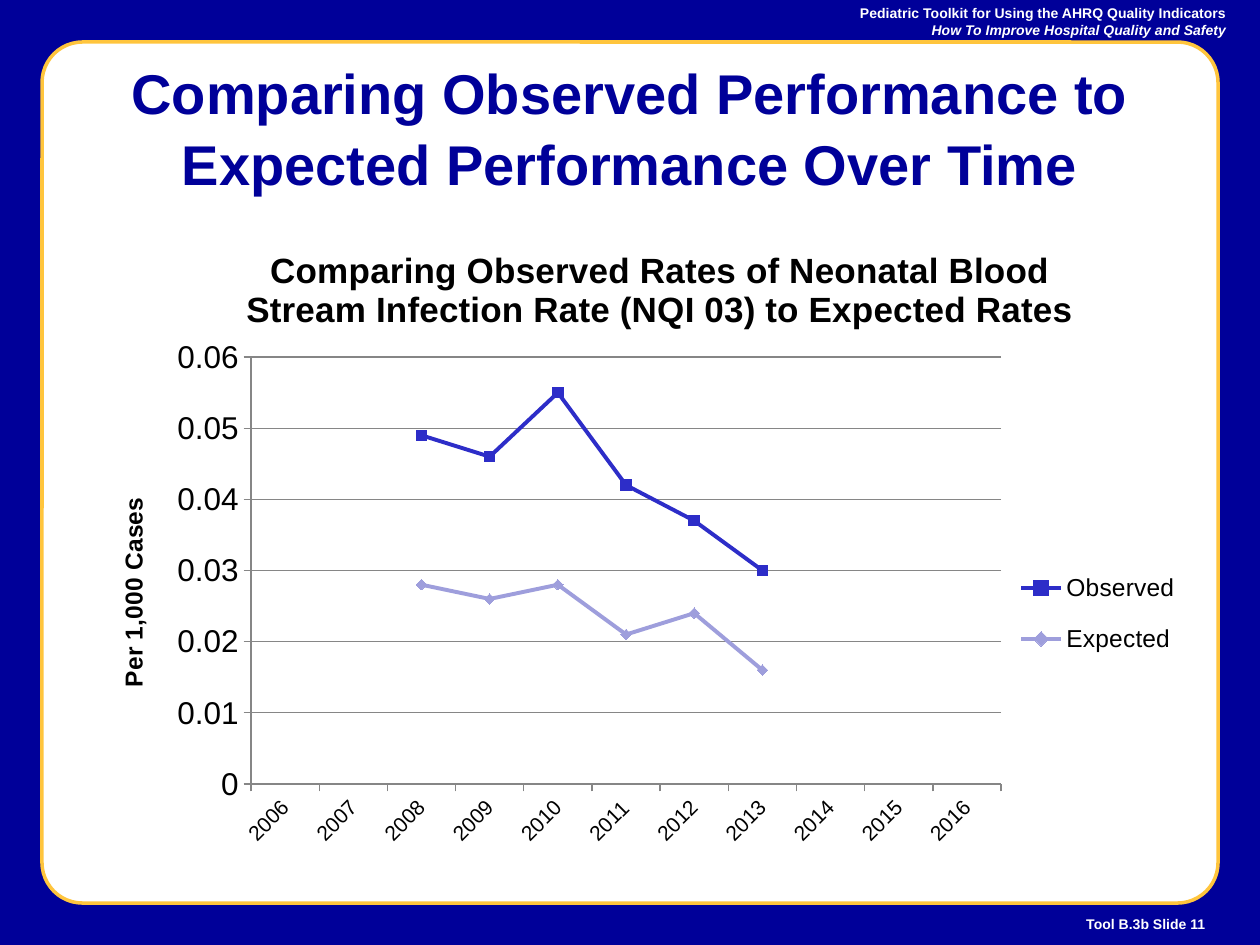
from pptx import Presentation
from pptx.chart.data import CategoryChartData
from pptx.dml.color import RGBColor
from pptx.enum.chart import XL_CHART_TYPE, XL_LEGEND_POSITION, XL_MARKER_STYLE, XL_TICK_MARK
from pptx.enum.shapes import MSO_SHAPE
from pptx.enum.text import MSO_ANCHOR, PP_ALIGN
from pptx.oxml import parse_xml
from pptx.oxml.ns import nsdecls, qn
from pptx.util import Pt

NAVY = RGBColor(0x00, 0x00, 0x99)
WHITE = RGBColor(0xFF, 0xFF, 0xFF)
GOLD = RGBColor(0xFF, 0xC5, 0x3D)
BLACK = RGBColor(0x00, 0x00, 0x00)
GRAY = RGBColor(0x86, 0x86, 0x86)
BLUE = RGBColor(0x2D, 0x2D, 0xC8)
LAVENDER = RGBColor(0x9E, 0x9E, 0xDC)

YEARS = [str(year) for year in range(2006, 2017)]
RATES = [
    ("Observed", [0.049, 0.046, 0.055, 0.042, 0.037, 0.03], BLUE, XL_MARKER_STYLE.SQUARE),
    ("Expected", [0.028, 0.026, 0.028, 0.021, 0.024, 0.016], LAVENDER, XL_MARKER_STYLE.DIAMOND),
]


def style_font(font, size, color=BLACK, bold=False, italic=False):
    font.name = "Arial"
    font.size = Pt(size)
    font.color.rgb = color
    font.bold = bold
    font.italic = italic


def write_text(frame, text, size=8, color=WHITE, bold=True, italic=False,
               align=PP_ALIGN.RIGHT, new_paragraph=False):
    paragraph = frame.add_paragraph() if new_paragraph else frame.paragraphs[0]
    paragraph.alignment = align
    run = paragraph.add_run()
    run.text = text
    style_font(run.font, size, color, bold, italic)
    return paragraph


def add_panel(slide, preset, left, top, width, height, fill, border=None):
    panel = slide.shapes.add_shape(preset, Pt(left), Pt(top), Pt(width), Pt(height))
    panel.shadow.inherit = False
    panel.fill.solid()
    panel.fill.fore_color.rgb = fill
    if border is None:
        panel.line.fill.background()
    else:
        panel.line.color.rgb = border
        panel.line.width = Pt(2)
    return panel


def add_caption(slide, left, top, width, height):
    frame = slide.shapes.add_textbox(Pt(left), Pt(top), Pt(width), Pt(height)).text_frame
    frame.word_wrap = True
    frame.vertical_anchor = MSO_ANCHOR.MIDDLE
    return frame


def place_title(slide, text):
    title = slide.shapes.title
    title.left, title.top, title.width, title.height = Pt(54), Pt(30), Pt(612), Pt(84)
    title.text_frame.word_wrap = True
    title.text_frame.vertical_anchor = MSO_ANCHOR.MIDDLE
    heading = write_text(title.text_frame, text, size=32, color=NAVY, align=PP_ALIGN.CENTER)
    heading.line_spacing = 1.05
    slide.shapes._spTree.append(title._element)


def set_layout(part, index, inner=False, **fractions):
    for previous in part.findall(qn("c:layout")):
        part.remove(previous)
    target = '<c:layoutTarget val="inner"/>' if inner else ""
    modes = "".join(f'<c:{axis}Mode val="edge"/>' for axis in "xy")
    values = "".join(f'<c:{key} val="{value}"/>' for key, value in fractions.items())
    part.insert(index, parse_xml(
        f'<c:layout {nsdecls("c")}><c:manualLayout>{target}{modes}{values}'
        "</c:manualLayout></c:layout>"))


def style_axis(axis, size):
    axis.major_tick_mark = XL_TICK_MARK.OUTSIDE
    axis.minor_tick_mark = XL_TICK_MARK.NONE
    axis.format.line.color.rgb = GRAY
    style_font(axis.tick_labels.font, size)


def style_series(series, color, marker_style):
    series.smooth = False
    series.format.line.color.rgb = color
    series.format.line.width = Pt(2.25)
    series.marker.style = marker_style
    series.marker.size = 6
    series.marker.format.fill.solid()
    series.marker.format.fill.fore_color.rgb = color
    series.marker.format.line.color.rgb = color


def add_rate_chart(slide):
    data = CategoryChartData()
    data.categories = YEARS
    for name, rates, _, _ in RATES:
        data.add_series(name, [None, None, *rates, None, None, None])
    chart = slide.shapes.add_chart(XL_CHART_TYPE.LINE_MARKERS, Pt(55.44), Pt(115.2),
                                   Pt(628.56), Pt(376.56), data).chart
    style_font(chart.font, 18)
    chart.plots[0].vary_by_categories = False
    for series, (_, _, color, marker_style) in zip(chart.plots[0].series, RATES):
        style_series(series, color, marker_style)

    chart.has_title = True
    write_text(chart.chart_title.text_frame,
               "Comparing Observed Rates of Neonatal Blood Stream Infection Rate "
               "(NQI 03) to Expected Rates", size=20, color=BLACK, align=PP_ALIGN.CENTER)
    set_layout(chart.chart_title._element, 1, x=0.13, y=0.06)

    years, rates = chart.category_axis, chart.value_axis
    style_axis(years, 12)
    years._element.find(qn("c:txPr")).find(qn("a:bodyPr")).set("rot", "-2700000")
    style_axis(rates, 18)
    rates.minimum_scale, rates.maximum_scale, rates.major_unit = 0, 0.06, 0.01
    rates.tick_labels.number_format = "General"
    rates.tick_labels.number_format_is_linked = False
    rates.has_major_gridlines = True
    rates.major_gridlines.format.line.color.rgb = GRAY
    rates.has_title = True
    write_text(rates.axis_title.text_frame, "Per 1,000 Cases", size=14, color=BLACK,
               align=PP_ALIGN.CENTER)

    chart.has_legend = True
    chart.legend.position = XL_LEGEND_POSITION.RIGHT
    chart.legend.include_in_layout = False
    style_font(chart.legend.font, 14)
    set_layout(chart.legend._element, 1, x=0.83, y=0.53, w=0.16, h=0.19)
    plot_area = chart._chartSpace.chart.plotArea
    set_layout(plot_area, 0, inner=True, x=0.14, y=0.236, w=0.682, h=0.648)


def main():
    deck = Presentation()
    deck.slide_width, deck.slide_height = Pt(720), Pt(540)
    slide = deck.slides.add_slide(deck.slide_layouts[5])
    add_panel(slide, MSO_SHAPE.RECTANGLE, 0, 0, 720, 540, NAVY)
    card = add_panel(slide, MSO_SHAPE.ROUNDED_RECTANGLE, 24, 24, 672, 492, WHITE, GOLD)
    card.adjustments[0] = 0.047
    header = add_caption(slide, 12, 0, 696, 24)
    write_text(header, "Pediatric Toolkit for Using the AHRQ Quality Indicators")
    write_text(header, "How To Improve Hospital Quality and Safety", italic=True,
               new_paragraph=True)
    footer = add_caption(slide, 12, 516, 684, 24)
    write_text(footer, "Tool B.3b Slide 11")
    place_title(slide, "Comparing Observed Performance to Expected Performance Over Time")
    add_rate_chart(slide)
    deck.save("out.pptx")


if __name__ == "__main__":
    main()
